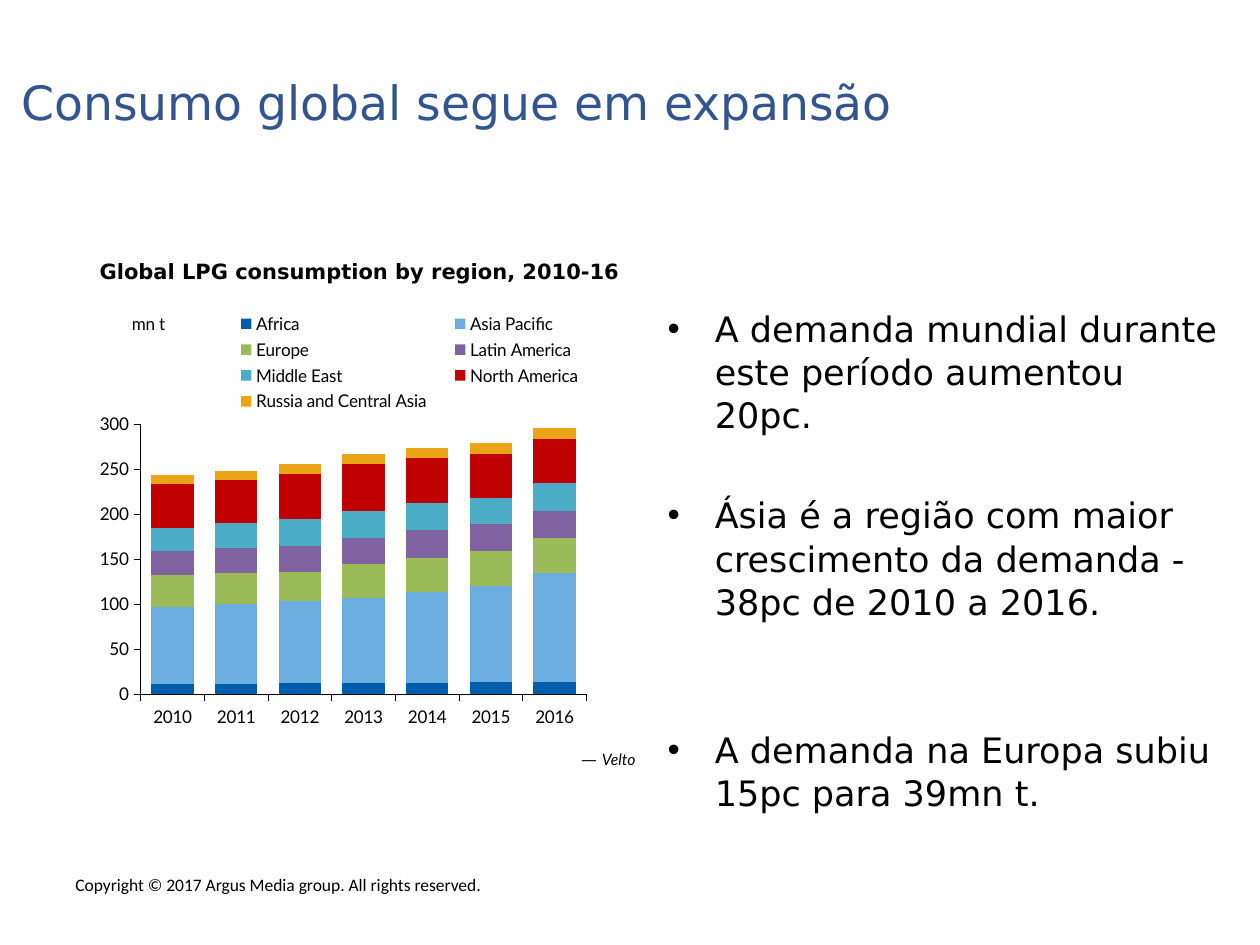
from dataclasses import dataclass

from lxml import etree
from pptx import Presentation
from pptx.chart.data import CategoryChartData
from pptx.dml.color import RGBColor
from pptx.enum.chart import XL_CHART_TYPE as ChartType
from pptx.enum.chart import XL_LEGEND_POSITION as LegendPosition
from pptx.enum.chart import XL_TICK_MARK as TickMark
from pptx.enum.text import MSO_ANCHOR as Anchor
from pptx.enum.text import PP_ALIGN as Align
from pptx.oxml.ns import qn
from pptx.util import Cm, Pt


@dataclass(frozen=True)
class Theme:
    ink: str = "000000"
    heading: str = "32548F"
    sans: str = "DejaVu Sans"
    chart_face: str = "Lato"
    footer_face: str = "Calibri"
    title_size: int = 27
    body_size: int = 20
    caption_size: int = 12
    small_size: int = 10
    source_size: int = 9


THEME = Theme()
YEARS = [str(year) for year in range(2010, 2017)]
REGIONS = [
    ("Africa", "005DAA", (11, 11, 12, 12, 12, 13, 13)),
    ("Asia Pacific", "6CADDF", (86, 89, 91, 95, 101, 107, 121)),
    ("Europe", "9BBB59", (35, 34, 33, 37, 38, 39, 40)),
    ("Latin America", "8064A2", (27, 28, 29, 30, 31, 30, 30)),
    ("Middle East", "4BACC6", (26, 28, 30, 29, 30, 29, 31)),
    ("North America", "C00000", (49, 48, 50, 53, 50, 49, 49)),
    ("Russia and Central Asia", "EBA415", (10, 10, 11, 11, 11, 12, 12)),
]
FINDINGS = [
    ("A demanda mundial durante este período aumentou 20pc.", 0),
    ("Ásia é a região com maior crescimento da demanda - 38pc de 2010 a 2016.", 32.5),
    ("A demanda na Europa subiu 15pc para 39mn t.", 60),
]


def apply(target, **formats):
    for name, value in formats.items():
        setattr(target, name, value)


def style_font(font, face, size, color=THEME.ink, **formats):
    apply(font, name=face, size=Pt(size), **formats)
    font.color.rgb = RGBColor.from_string(color)


def place(shape, box):
    apply(shape, **dict(zip(("left", "top", "width", "height"), map(Cm, box))))


def add_text(slide, box, **formats):
    frame = slide.shapes.add_textbox(*map(Cm, box)).text_frame
    apply(frame, word_wrap=True, vertical_anchor=Anchor.TOP, **formats)
    return frame


def add_run(paragraph, text, *font_values, **formats):
    run = paragraph.add_run()
    run.text = text
    style_font(run.font, *font_values, **formats)


def build_title(slide, box):
    title = slide.shapes.title
    place(title, box)
    apply(title.text_frame, word_wrap=True, vertical_anchor=Anchor.TOP, margin_top=Cm(0.23))
    paragraph = title.text_frame.paragraphs[0]
    paragraph.alignment = Align.LEFT
    add_run(paragraph, "Consumo global segue em expansão",
            THEME.sans, THEME.title_size, THEME.heading)


def build_findings(slide, box):
    frame = add_text(slide, box, margin_top=Cm(1.17), margin_right=Cm(0.3))
    for index, (finding, gap) in enumerate(FINDINGS):
        paragraph = frame.add_paragraph() if index else frame.paragraphs[0]
        properties = paragraph._p.get_or_add_pPr()
        properties.set("marL", str(Cm(0.95)))
        properties.set("indent", str(-Cm(0.95)))
        etree.SubElement(properties, qn("a:buFont")).set("typeface", "Arial")
        etree.SubElement(properties, qn("a:buChar")).set("char", "•")
        apply(paragraph, space_before=Pt(gap), line_spacing=1.03)
        add_run(paragraph, finding, THEME.sans, THEME.body_size)


def set_layout(parent, position, inner=False, **fractions):
    for old in parent.findall(qn("c:layout")):
        parent.remove(old)
    layout = etree.Element(qn("c:layout"))
    manual = etree.SubElement(layout, qn("c:manualLayout"))
    values = {"layoutTarget": "inner"} if inner else {}
    values |= {"xMode": "edge", "yMode": "edge"}
    values |= {key: str(value) for key, value in fractions.items()}
    for tag, value in values.items():
        etree.SubElement(manual, qn(f"c:{tag}")).set("val", value)
    parent.insert(position, layout)


def style_axis(axis):
    apply(axis, has_major_gridlines=False, major_tick_mark=TickMark.OUTSIDE,
          minor_tick_mark=TickMark.NONE)
    axis.format.line.width = Pt(0.5)
    axis.format.line.color.rgb = RGBColor.from_string(THEME.ink)
    style_font(axis.tick_labels.font, THEME.chart_face, THEME.small_size)


def build_consumption_chart(slide, box):
    consumption = CategoryChartData(number_format="#,##0")
    consumption.categories = YEARS
    for region, _, volumes in REGIONS:
        consumption.add_series(region, volumes)
    chart = slide.shapes.add_chart(
        ChartType.COLUMN_STACKED, *map(Cm, box), consumption).chart
    apply(chart, has_title=False, has_legend=True)
    style_font(chart.font, THEME.chart_face, THEME.small_size)

    bars = chart.plots[0]
    apply(bars, gap_width=50, overlap=100, vary_by_categories=False)
    for series, (_, color, _) in zip(bars.series, REGIONS):
        series.format.fill.solid()
        series.format.fill.fore_color.rgb = RGBColor.from_string(color)

    volume_axis = chart.value_axis
    for axis in (chart.category_axis, volume_axis):
        style_axis(axis)
    apply(volume_axis, minimum_scale=0, maximum_scale=300, major_unit=50)
    apply(volume_axis.tick_labels, number_format="#,##0", number_format_is_linked=False)

    unit = volume_axis.axis_title
    add_run(unit.text_frame.paragraphs[0], "mn t",
            THEME.chart_face, THEME.small_size, bold=False)
    unit.text_frame._txBody.bodyPr.set("rot", "0")
    unit.text_frame._txBody.bodyPr.set("vert", "horz")
    set_layout(unit._element, 1, x=0.03, y=0.02)

    legend = chart.legend
    apply(legend, position=LegendPosition.TOP, include_in_layout=False)
    style_font(legend.font, THEME.chart_face, THEME.small_size)
    set_layout(legend._element, 1, x=0.2, y=0.02, w=0.73, h=0.22)
    set_layout(chart._chartSpace.chart.plotArea, 0, inner=True,
               x=0.053, y=0.255, w=0.849, h=0.548)


def build_chart_region(slide, box):
    left, top, width, height = box
    no_margins = dict.fromkeys(
        ("margin_left", "margin_top", "margin_right", "margin_bottom"), 0)
    caption = add_text(slide, (left, top, width, 0.46), **no_margins).paragraphs[0]
    caption.space_after = Pt(3)
    add_run(caption, "Global LPG consumption by region, 2010-16",
            THEME.sans, THEME.caption_size, bold=True)

    build_consumption_chart(slide, (left, top + 0.81, width, height - 0.81))

    credit = add_text(slide, (left + 6.4, top + 9.78, 4.65, 0.64)).paragraphs[0]
    credit.alignment = Align.RIGHT
    add_run(credit, "— ", THEME.sans, THEME.source_size, italic=True)
    add_run(credit, "Velto", THEME.chart_face, THEME.source_size, italic=True)


def build_footer(slide, box):
    add_run(add_text(slide, box).paragraphs[0],
            "Copyright © 2017 Argus Media group. All rights reserved.",
            THEME.footer_face, THEME.small_size)


def main():
    deck = Presentation()
    apply(deck, slide_width=Cm(25.4), slide_height=Cm(19.05))
    slide = deck.slides.add_slide(deck.slide_layouts[5])
    build_footer(slide, (1.27, 17.5, 10.62, 1.02))
    build_title(slide, (0.18, 1.24, 25.22, 1.7))
    build_findings(slide, (13.21, 5, 11.81, 10.29))
    build_chart_region(slide, (2.01, 5.21, 10.85, 10.74))
    deck.save("out.pptx")


if __name__ == "__main__":
    main()
